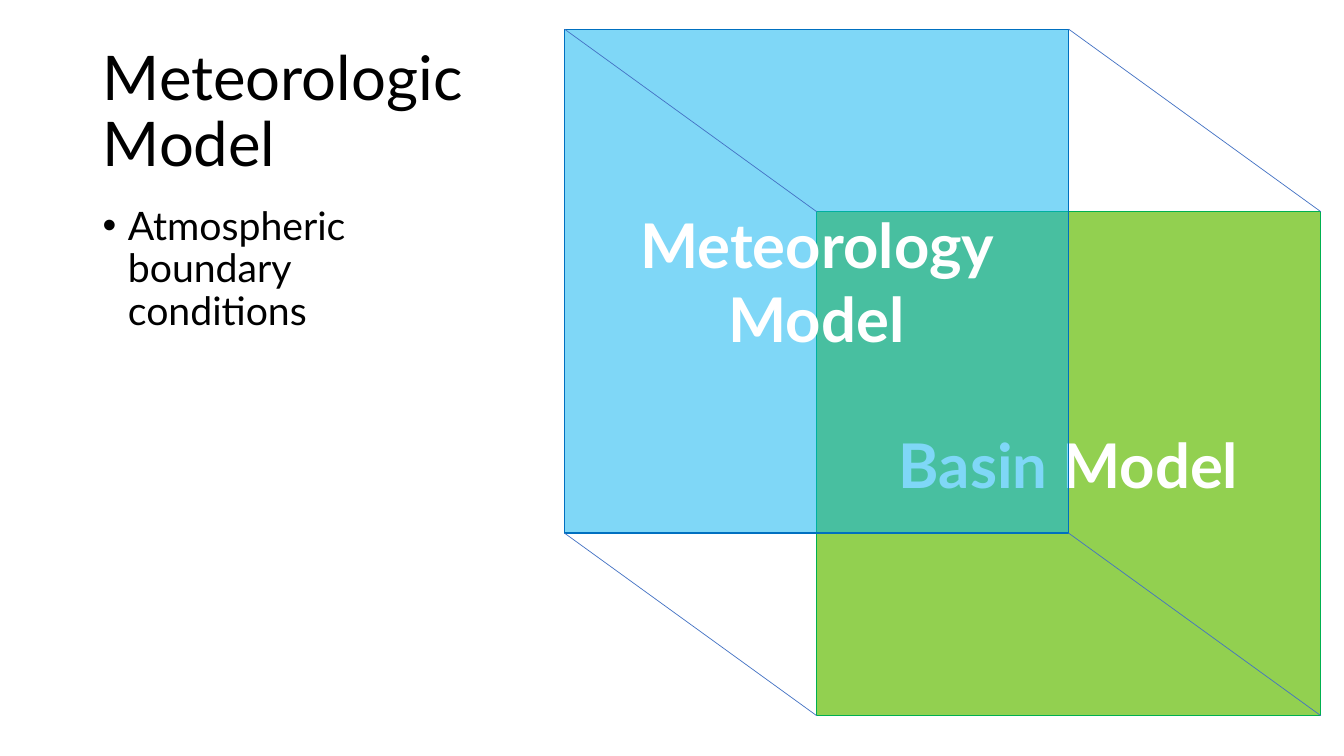
from lxml.etree import SubElement
from pptx import Presentation
from pptx.dml.color import RGBColor
from pptx.enum.shapes import MSO_CONNECTOR as Connector, MSO_SHAPE as Shape
from pptx.enum.text import MSO_ANCHOR as Anchor, PP_ALIGN as Align
from pptx.oxml.ns import qn
from pptx.util import Inches, Pt

FONT = "Lato"
SIDE = 5
DEPTH_X, DEPTH_Y = 2.5, 1.81


def color(hex_string):
    return RGBColor.from_string(hex_string)


def write(shape, text, size=44, ink="000000", bold=False, align=Align.LEFT,
          anchor=Anchor.MIDDLE, spacing=None, before=0):
    frame = shape.text_frame
    frame.word_wrap = True
    frame.vertical_anchor = anchor
    para = frame.paragraphs[0]
    para.text = text
    para.alignment = align
    para.line_spacing = spacing
    para.space_before = Pt(before)
    for span in para.runs:
        span.font.name = FONT
        span.font.size = Pt(size)
        span.font.bold = bold
        span.font.color.rgb = color(ink)
    return para


def add_bullet(para, indent):
    props = para._p.get_or_add_pPr()
    props.set("marL", str(Inches(indent)))
    props.set("indent", str(-Inches(indent)))
    SubElement(props, qn("a:buFont"), typeface="Arial")
    SubElement(props, qn("a:buChar"), char="•")


def add_face(page, left, top, text, fill, outline, opacity=100):
    face = page.shapes.add_shape(Shape.RECTANGLE, Inches(left), Inches(top),
                                 Inches(SIDE), Inches(SIDE))
    face.shadow.inherit = False
    face.fill.solid()
    face.fill.fore_color.rgb = color(fill)
    if opacity < 100:
        tint = face.fill._xPr.find(qn("a:solidFill"))[0]
        SubElement(tint, qn("a:alpha"), val=str(opacity * 1000))
    face.line.color.rgb = color(outline)
    face.line.width = Pt(1)
    write(face, text, ink="FFFFFF", bold=True, align=Align.CENTER)


def add_edge(page, left, top):
    edge = page.shapes.add_connector(
        Connector.STRAIGHT, Inches(left), Inches(top),
        Inches(left + DEPTH_X), Inches(top + DEPTH_Y))
    edge.line.color.rgb = color("4472C4")
    edge.line.width = Pt(0.5)
    SubElement(edge._element.spPr, qn("a:effectLst"))


def add_cube(page, left, top):
    # Basin behind, translucent meteorology in front
    add_face(page, left + DEPTH_X, top + DEPTH_Y, "Basin Model", "92D050", "00B050")
    add_face(page, left, top, "Meteorology Model", "00B0F0", "0070C0", opacity=50)
    # Edges joining matching corners
    for across, down in ((SIDE, 0), (0, SIDE), (SIDE, SIDE), (0, 0)):
        add_edge(page, left + across, top + down)


def add_summary(page, left, top):
    # Heading
    heading = page.shapes.add_textbox(Inches(left), Inches(top),
                                      Inches(5.75), Inches(1.45))
    write(heading, "Meteorologic\vModel", spacing=0.9)
    # Bullet point
    body = page.shapes.add_textbox(Inches(left), Inches(top + 1.6),
                                   Inches(3.81), Inches(4.76))
    point = write(body, "Atmospheric boundary conditions", size=28,
                  anchor=Anchor.TOP, spacing=0.9, before=10)
    add_bullet(point, 0.25)


def main():
    deck = Presentation()
    deck.slide_width, deck.slide_height = Inches(13.33), Inches(7.5)
    page = deck.slides.add_slide(deck.slide_layouts[6])
    add_cube(page, 5.6, 0.29)
    add_summary(page, 0.92, 0.4)
    deck.save("out.pptx")


if __name__ == "__main__":
    main()
